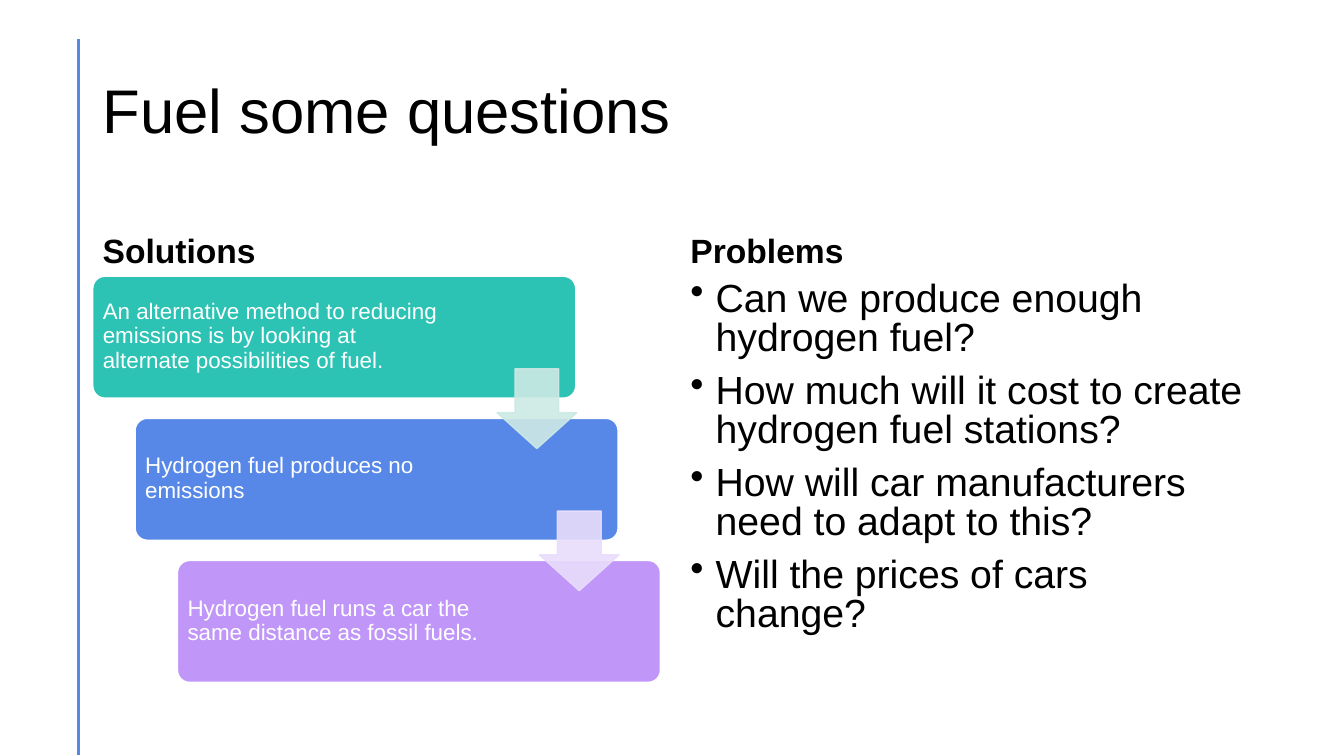
import pptx
import pptx.util
import pptx.dml.color
import pptx.enum.shapes
import pptx.enum.text
import pptx.oxml.ns
import lxml.etree
from pptx.util import Inches

SHAPES = pptx.enum.shapes.MSO_SHAPE
ANCHOR = pptx.enum.text.MSO_ANCHOR
qn = pptx.oxml.ns.qn


def colour(hex_string):
    return pptx.dml.color.RGBColor.from_string(hex_string)


def add_text(place, lines, size, hex_string="000000", anchor=ANCHOR.MIDDLE,
             bold=False, spacing=0.9, before=0, inset=(0.1, 0.05), bullet=False):
    box = page.shapes.add_textbox(*[Inches(value) for value in place])
    frame = box.text_frame
    frame.word_wrap = True
    frame.vertical_anchor = anchor
    frame.margin_left = frame.margin_right = Inches(inset[0])
    frame.margin_top = frame.margin_bottom = Inches(inset[1])
    for index, line in enumerate(lines):
        para = frame.add_paragraph() if index else frame.paragraphs[0]
        para.line_spacing = spacing
        para.space_before = pptx.util.Pt(before)
        if bullet:
            props = para._p.get_or_add_pPr()
            props.set("marL", str(Inches(0.25)))
            props.set("indent", str(Inches(-0.25)))
            lxml.etree.SubElement(props, qn("a:buChar"), char="•")
        span = para.add_run()
        span.text = line
        span.font.name = "Arial"
        span.font.size = pptx.util.Pt(size)
        span.font.bold = bold
        span.font.color.rgb = colour(hex_string)


deck = pptx.Presentation()
deck.slide_width, deck.slide_height = Inches(13.33), Inches(7.5)
page = deck.slides.add_slide(deck.slide_layouts[6])

# Vertical rule at the left
rule = page.shapes.add_connector(pptx.enum.shapes.MSO_CONNECTOR.STRAIGHT,
                                 Inches(0.78), Inches(0.39), Inches(0.78), Inches(7.49))
rule.line.color.rgb = colour("5888E7")
rule.line.width = pptx.util.Pt(2)
lxml.etree.SubElement(rule._element.spPr, qn("a:effectLst"))

# Title and column headings
add_text((0.92, 0.4, 11.5, 1.45), ["Fuel some questions"], 44)
for left, heading in [(0.92, "Solutions"), (6.75, "Problems")]:
    add_text((left, 1.84, 5.65, 0.9), [heading], 24,
             anchor=ANCHOR.BOTTOM, bold=True, before=10)

# Staircase of solutions
step_x, step_y = 0.42, 1.41
solutions = [
    ("2CC3B4", "An alternative method to reducing emissions is by looking at "
               "alternate possibilities of fuel."),
    ("5888E7", "Hydrogen fuel produces no emissions"),
    ("C097F8", "Hydrogen fuel runs a car the same distance as fossil fuels."),
]
for index, (fill, wording) in enumerate(solutions):
    left, top = 0.92 + index * step_x, 2.74 + index * step_y
    card = page.shapes.add_shape(SHAPES.ROUNDED_RECTANGLE, Inches(left), Inches(top),
                                 Inches(4.79), Inches(1.21))
    card.adjustments[0] = 0.1
    card.shadow.inherit = False
    card.fill.solid()
    card.fill.fore_color.rgb = colour(fill)
    card.line.color.rgb = colour("FFFFFF")
    card.line.width = pptx.util.Pt(1)
    add_text((left + 0.03, top + 0.03, 3.5, 1.14), [wording], 16, "FFFFFF",
             inset=(0.07, 0.07))

# Translucent arrows between the steps
for index, tint in enumerate(["CDE9E5", "E9DDFC"]):
    arrow = page.shapes.add_shape(SHAPES.DOWN_ARROW, Inches(4.93 + index * step_x),
                                  Inches(3.66 + index * step_y), Inches(0.79), Inches(0.79))
    arrow.adjustments[0], arrow.adjustments[1] = 0.55, 0.45
    arrow.shadow.inherit = False
    arrow.fill.solid()
    arrow.fill.fore_color.rgb = colour(tint)
    arrow.line.color.rgb = colour(tint)
    arrow.line.width = pptx.util.Pt(1)
    for paint in arrow._element.spPr.findall(".//" + qn("a:srgbClr")):
        lxml.etree.SubElement(paint, qn("a:alpha"), val="90000")

# Problems list
add_text((6.75, 2.74, 5.67, 4.03), [
    "Can we produce enough hydrogen fuel?",
    "How much will it cost to create hydrogen fuel stations?",
    "How will car manufacturers need to adapt to this?",
    "Will the prices of cars change?",
], 28, anchor=ANCHOR.TOP, spacing=0.83, before=10, bullet=True)

deck.save("out.pptx")
